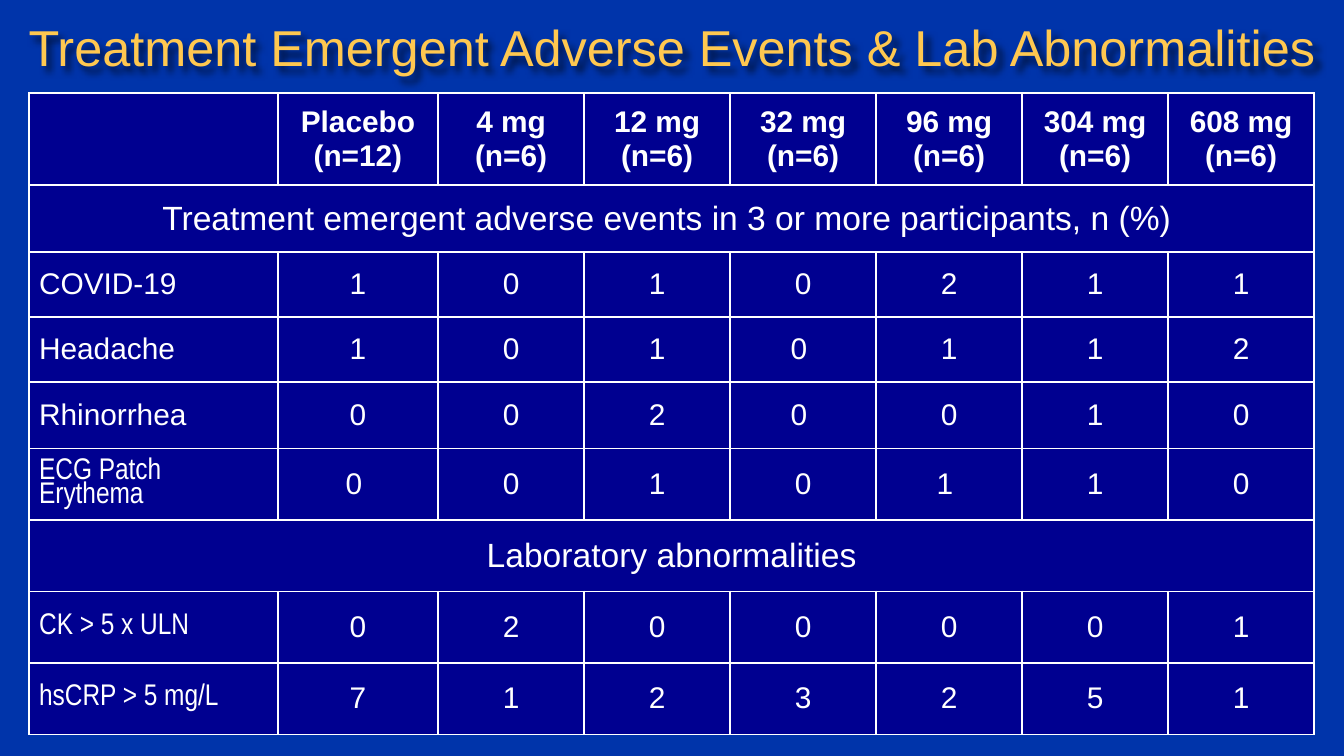
import pptx
import pptx.dml.color
import pptx.enum.text
import pptx.oxml
import pptx.oxml.ns
import pptx.util
from dataclasses import dataclass

Cm = pptx.util.Cm
Pt = pptx.util.Pt
RGB = pptx.dml.color.RGBColor.from_string
CENTER = pptx.enum.text.PP_ALIGN.CENTER
LEFT = pptx.enum.text.PP_ALIGN.LEFT
MIDDLE = pptx.enum.text.MSO_ANCHOR.MIDDLE


@dataclass
class Theme:
    background: str = "0034AA"
    cell: str = "000090"
    ink: str = "FFFFFF"
    gold: str = "FFC850"
    font: str = "Arial"
    narrow_font: str = "Arial Narrow"
    title_size: int = 27
    section_size: int = 18
    body_size: int = 16
    thin: float = 1
    thick: float = 1.5


theme = Theme()
namespace = pptx.oxml.ns.nsdecls("a")


def add_borders(cell, widths):
    properties = cell._tc.get_or_add_tcPr()
    for side, width in widths.items():
        properties.append(pptx.oxml.parse_xml(
            f'<a:ln{side} {namespace} w="{Pt(width)}"><a:solidFill>'
            f'<a:srgbClr val="{theme.ink}"/></a:solidFill></a:ln{side}>'))


def style_paragraph(paragraph, size, color, font, align, bold=False):
    paragraph.alignment = align
    paragraph.font.size = Pt(size)
    paragraph.font.name = font
    paragraph.font.bold = bold
    paragraph.font.color.rgb = RGB(color)


deck = pptx.Presentation()
deck.slide_width = Cm(25.4)
deck.slide_height = Cm(14.29)
slide = deck.slides.add_slide(deck.slide_layouts[5])
slide.background.fill.solid()
slide.background.fill.fore_color.rgb = RGB(theme.background)

title = slide.shapes.title
title.left, title.top, title.width, title.height = Cm(0), Cm(0), Cm(25.4), Cm(1.75)
title.text_frame.text = "Treatment Emergent Adverse Events & Lab Abnormalities"
title.text_frame.auto_size = pptx.enum.text.MSO_AUTO_SIZE.NONE
title.text_frame.vertical_anchor = MIDDLE
style_paragraph(title.text_frame.paragraphs[0], theme.title_size, theme.gold, theme.font, CENTER)
title._element.spPr.append(pptx.oxml.parse_xml(
    f'<a:effectLst {namespace}><a:outerShdw blurRad="50800" dist="50800" dir="2700000">'
    '<a:srgbClr val="000000"><a:alpha val="60000"/></a:srgbClr></a:outerShdw></a:effectLst>'))

rows = [
    ["", "Placebo\n(n=12)", "4 mg\v(n=6)", "12 mg\v(n=6)", "32 mg\v(n=6)", "96 mg\v(n=6)",
     "304 mg (n=6)", "608 mg (n=6)"],
    ["Treatment emergent adverse events in 3 or more participants, n (%) "],
    ["COVID-19", "1", "0", "1", "0", "2", "1", "1"],
    ["Headache", "1", "0", "1", "0 ", "1", "1", "2"],
    ["Rhinorrhea", "0", "0", "2", "0 ", "0", "1", "0"],
    ["ECG Patch Erythema", "0 ", "0", "1", "0", "1 ", "1", "0"],
    ["Laboratory abnormalities"],
    ["CK > 5 x ULN", "0", "2", "0", "0", "0", "0", "1"],
    ["hsCRP > 5 mg/L", "7", "1", "2", "3", "2", "5", "1"],
]
narrow_labels = {"ECG Patch Erythema", "CK > 5 x ULN", "hsCRP > 5 mg/L"}
column_widths = [4.7, 3.03] + [2.76] * 6
row_heights = [1.74, 1.26, 1.23, 1.23, 1.26] + [1.35] * 4

events = slide.shapes.add_table(
    len(rows), len(column_widths), Cm(0.55), Cm(1.76),
    Cm(sum(column_widths)), Cm(sum(row_heights))).table
events.first_row = False
events.horz_banding = False
for column, width in zip(events.columns, column_widths):
    column.width = Cm(width)
for row, height in zip(events.rows, row_heights):
    row.height = Cm(height)

for row_index, texts in enumerate(rows):
    is_header = row_index == 0
    is_section = len(texts) == 1
    if is_section:
        events.cell(row_index, 0).merge(events.cell(row_index, len(column_widths) - 1))
    for column_index in range(len(column_widths)):
        cell = events.cell(row_index, column_index)
        add_borders(cell, {
            "L": theme.thin, "R": theme.thin,
            "T": theme.thick if row_index == 1 else theme.thin,
            "B": theme.thick if is_header else theme.thin})
        cell.fill.solid()
        cell.fill.fore_color.rgb = RGB(theme.cell)
        cell.vertical_anchor = MIDDLE
        cell.margin_left = cell.margin_right = Cm(0.19)
        cell.margin_top = cell.margin_bottom = Cm(0)
        if column_index >= len(texts):
            continue
        text = texts[column_index]
        is_narrow = text in narrow_labels
        cell.text_frame.text = text
        for paragraph in cell.text_frame.paragraphs:
            style_paragraph(
                paragraph,
                theme.section_size if is_section else theme.body_size,
                theme.ink,
                theme.narrow_font if is_narrow else theme.font,
                CENTER if is_section or column_index else LEFT,
                is_header)
            if is_narrow:
                paragraph.line_spacing = 0.85

deck.save("out.pptx")
